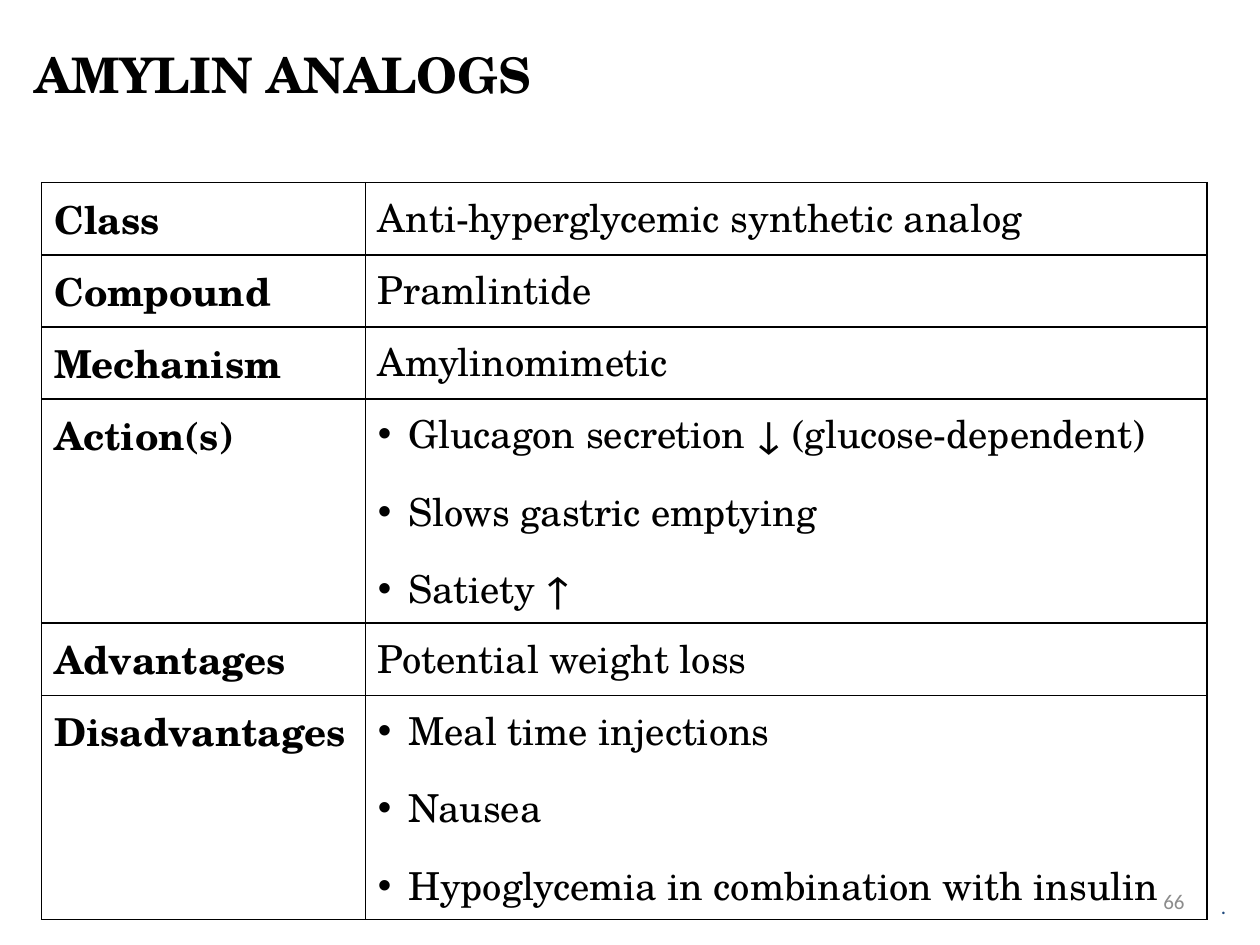
from dataclasses import dataclass

from lxml.etree import SubElement
from pptx import Presentation
from pptx.dml.color import RGBColor
from pptx.enum.text import MSO_ANCHOR, PP_ALIGN
from pptx.oxml.ns import qn
from pptx.util import Inches, Pt


@dataclass(frozen=True)
class Theme:
    serif: str = "TeX Gyre Schola"
    sans: str = "Calibri"
    black: str = "000000"
    blue: str = "1F497D"
    grey: str = "8C8C8C"
    title_size: int = 28
    table_size: int = 22
    footer_size: int = 12
    paragraph_gap: int = 12
    border_width: int = 1
    bullet_indent: float = 0.24


THEME = Theme()
COLUMN_WIDTHS = (2.57, 6.68)
LINE_ROW_HEIGHT = 0.57
LIST_ROW_HEIGHT = 1.78
DRUG_PROFILE = (
    ("Class", "Anti-hyperglycemic synthetic analog"),
    ("Compound", "Pramlintide"),
    ("Mechanism", "Amylinomimetic"),
    ("Action(s)", ("Glucagon secretion ↓ (glucose-dependent)",
                   "Slows gastric emptying", "Satiety ↑")),
    ("Advantages", "Potential weight loss"),
    ("Disadvantages", ("Meal time injections", "Nausea",
                       "Hypoglycemia in combination with insulin")),
)


def add_run(paragraph, text, font_name, size, color, bold=False):
    run = paragraph.add_run()
    run.text = text
    run.font.name = font_name
    run.font.size = Pt(size)
    run.font.bold = bold
    run.font.color.rgb = RGBColor.from_string(color)


def add_bullet(paragraph):
    properties = paragraph._p.get_or_add_pPr()
    indent = Inches(THEME.bullet_indent)
    properties.set("marL", str(indent))
    properties.set("indent", str(-indent))
    SubElement(properties, qn("a:buFont"), typeface="Arial")
    SubElement(properties, qn("a:buChar"), char="•")


def add_borders(cell):
    properties = cell._tc.get_or_add_tcPr()
    for side in ("a:lnL", "a:lnR", "a:lnT", "a:lnB"):
        line = SubElement(properties, qn(side), w=str(Pt(THEME.border_width)))
        fill = SubElement(line, qn("a:solidFill"))
        SubElement(fill, qn("a:srgbClr"), val=THEME.black)


def fill_cell(cell, content, bold=False):
    """Write a string as one plain line, or a tuple as a bulleted list."""
    add_borders(cell)
    cell.fill.background()
    is_list = isinstance(content, tuple)
    for index, text in enumerate(content if is_list else (content,)):
        if index == 0:
            paragraph = cell.text_frame.paragraphs[0]
        else:
            paragraph = cell.text_frame.add_paragraph()
            paragraph.space_before = Pt(THEME.paragraph_gap)
        if is_list:
            add_bullet(paragraph)
        add_run(paragraph, text, THEME.serif, THEME.table_size, THEME.black, bold)


def add_title(slide, text):
    title = slide.shapes.title
    title.left, title.top = Inches(0.17), Inches(0.13)
    title.width, title.height = Inches(9.66), Inches(0.92)
    title.text_frame.vertical_anchor = MSO_ANCHOR.MIDDLE
    paragraph = title.text_frame.paragraphs[0]
    paragraph.alignment = PP_ALIGN.LEFT
    add_run(paragraph, text, THEME.serif, THEME.title_size, THEME.black, bold=True)


def add_profile_table(slide):
    heights = [LIST_ROW_HEIGHT if isinstance(content, tuple) else LINE_ROW_HEIGHT
               for _, content in DRUG_PROFILE]
    frame = slide.shapes.add_table(
        len(DRUG_PROFILE), len(COLUMN_WIDTHS), Inches(0.33), Inches(1.45),
        Inches(sum(COLUMN_WIDTHS)), Inches(sum(heights)))
    table = frame.table
    table.first_row = table.horz_banding = False
    for column, width in zip(table.columns, COLUMN_WIDTHS):
        column.width = Inches(width)
    for row, height, (label, content) in zip(table.rows, heights, DRUG_PROFILE):
        row.height = Inches(height)
        fill_cell(row.cells[0], label, bold=True)
        fill_cell(row.cells[1], content)


def add_footer(slide, text, left, top, width, height, color):
    box = slide.shapes.add_textbox(
        Inches(left), Inches(top), Inches(width), Inches(height))
    box.text_frame.word_wrap = True
    box.text_frame.vertical_anchor = MSO_ANCHOR.MIDDLE
    paragraph = box.text_frame.paragraphs[0]
    paragraph.alignment = PP_ALIGN.RIGHT
    add_run(paragraph, text, THEME.sans, THEME.footer_size, color)


def main():
    presentation = Presentation()
    presentation.slide_width, presentation.slide_height = Inches(10), Inches(7.5)
    slide = presentation.slides.add_slide(presentation.slide_layouts[5])
    add_title(slide, "AMYLIN ANALOGS")
    add_profile_table(slide)
    add_footer(slide, ".", 3.26, 6.92, 6.57, 0.55, THEME.blue)
    add_footer(slide, "66", 7.17, 6.95, 2.33, 0.4, THEME.grey)
    presentation.save("out.pptx")


if __name__ == "__main__":
    main()
